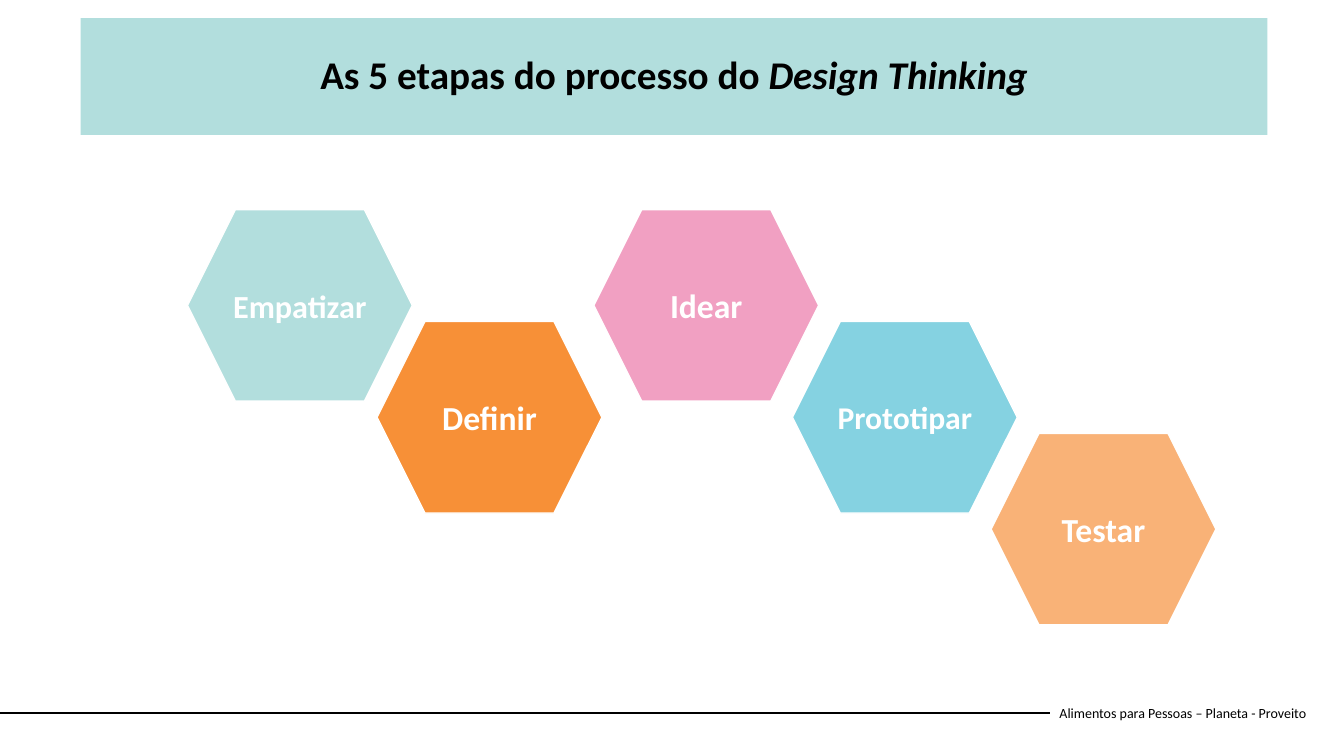
from lxml.etree import SubElement
from pptx import Presentation
from pptx.dml.color import RGBColor
from pptx.enum.shapes import MSO_CONNECTOR, MSO_SHAPE
from pptx.enum.text import MSO_ANCHOR, PP_ALIGN
from pptx.oxml.ns import qn
from pptx.util import Inches, Pt

WIDTH, HEIGHT = 13.33, 7.5
FONT = "Calibri"
BLACK, WHITE, AQUA = "000000", "FFFFFF", "B2DEDD"
HEX_W, HEX_H = 2.23, 1.9
ROW_TOP, ROW_STEP = 2.08, 1.11
FOOTER_X, FOOTER_Y = 10.41, 7.07
FOOTER_H = 0.4

STEPS = [
    ("Empatizar", 1.86, 0, AQUA, 23),
    ("Definir", 3.74, 1, "F79037", 24),
    ("Idear", 5.89, 0, "F1A0C2", 24),
    ("Prototipar", 7.86, 1, "85D2E1", 22.6),
    ("Testar", 9.83, 2, "F9B277", 24),
]


def rgb(value):
    return RGBColor.from_string(value)


def write(sp, runs, size, color=BLACK, bold=False, align=PP_ALIGN.CENTER,
          spacing=None, before=None, inset=0.1):
    tf = sp.text_frame
    tf.word_wrap = True
    tf.vertical_anchor = MSO_ANCHOR.MIDDLE
    tf.margin_left = tf.margin_right = Inches(inset)
    tf.margin_top = tf.margin_bottom = Inches(inset / 2)
    p = tf.paragraphs[0]
    p.alignment = align
    p.line_spacing = spacing
    p.space_before = before
    for text, italic in runs:
        r = p.add_run()
        r.text = text
        r.font.name = FONT
        r.font.size = Pt(size)
        r.font.bold = bold
        r.font.italic = italic
        r.font.color.rgb = rgb(color)


def add_block(s, kind, box, fill, outline=None):
    sp = s.shapes.add_shape(kind, *map(Inches, box))
    sp.shadow.inherit = False
    sp.fill.solid()
    sp.fill.fore_color.rgb = rgb(fill)
    if outline:
        sp.line.color.rgb = rgb(outline)
        sp.line.width = Pt(1)
    else:
        sp.line.fill.background()
    return sp


def add_title(s):
    sp = add_block(s, MSO_SHAPE.RECTANGLE, (0.8, 0.18, 11.77, 1.16), AQUA)
    runs = [("As 5 etapas do processo do ", False), ("Design Thinking", True)]
    write(sp, runs, 28, bold=True, spacing=0.9, before=Pt(10))


def add_step(s, name, left, row, fill, size):
    box = (left, ROW_TOP + row * ROW_STEP, HEX_W, HEX_H)
    sp = add_block(s, MSO_SHAPE.HEXAGON, box, fill, WHITE)
    write(sp, [(name, False)], size, WHITE, bold=True, inset=0)


def add_footer(s):
    box = (FOOTER_X, FOOTER_Y - FOOTER_H / 2, 2.73, FOOTER_H)
    sp = s.shapes.add_textbox(*map(Inches, box))
    write(sp, [("Alimentos para Pessoas – Planeta - Proveito", False)], 10,
          align=PP_ALIGN.LEFT)
    ends = (0, FOOTER_Y, FOOTER_X, FOOTER_Y)
    rule = s.shapes.add_connector(MSO_CONNECTOR.STRAIGHT, *map(Inches, ends))
    rule.line.color.rgb = rgb(BLACK)
    rule.line.width = Pt(1.5)
    SubElement(rule._element.spPr, qn("a:effectLst"))


def main():
    prs = Presentation()
    prs.slide_width, prs.slide_height = Inches(WIDTH), Inches(HEIGHT)
    s = prs.slides.add_slide(prs.slide_layouts[6])
    add_footer(s)
    add_title(s)
    for step in STEPS:
        add_step(s, *step)
    prs.save("out.pptx")


if __name__ == "__main__":
    main()
